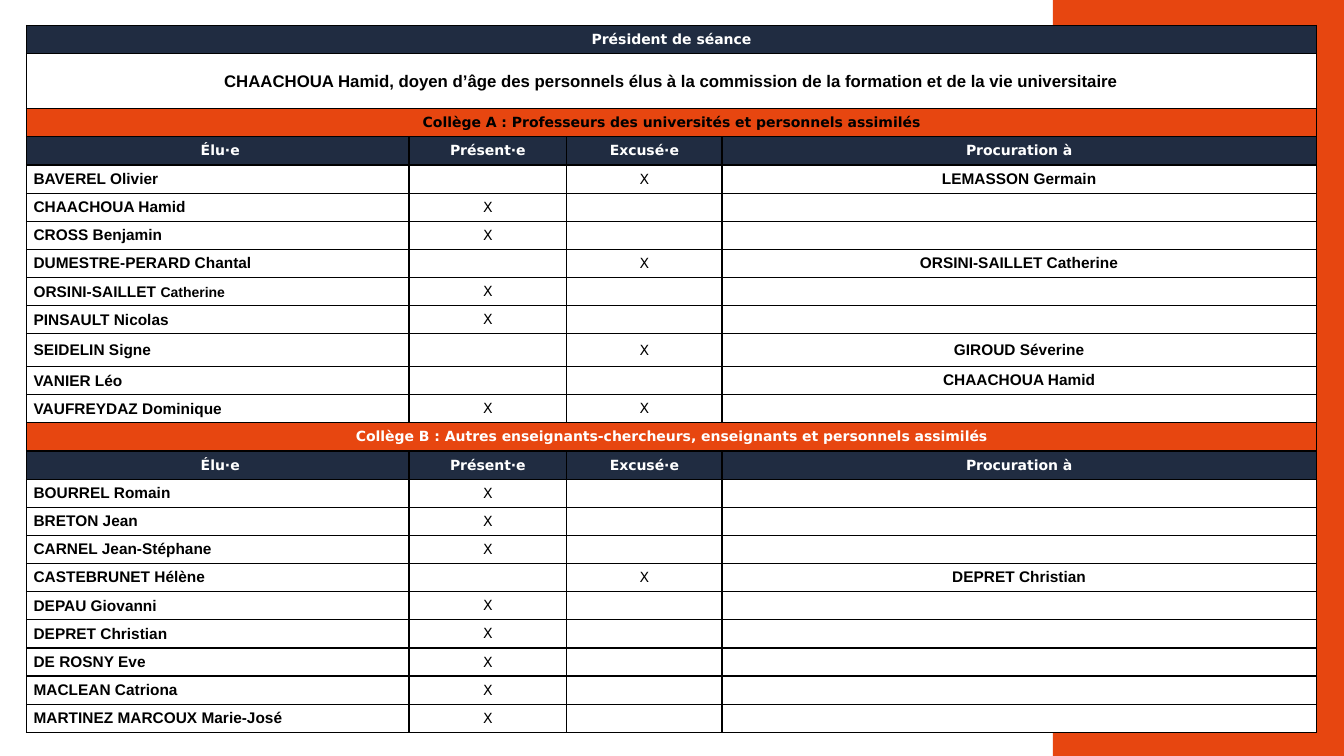
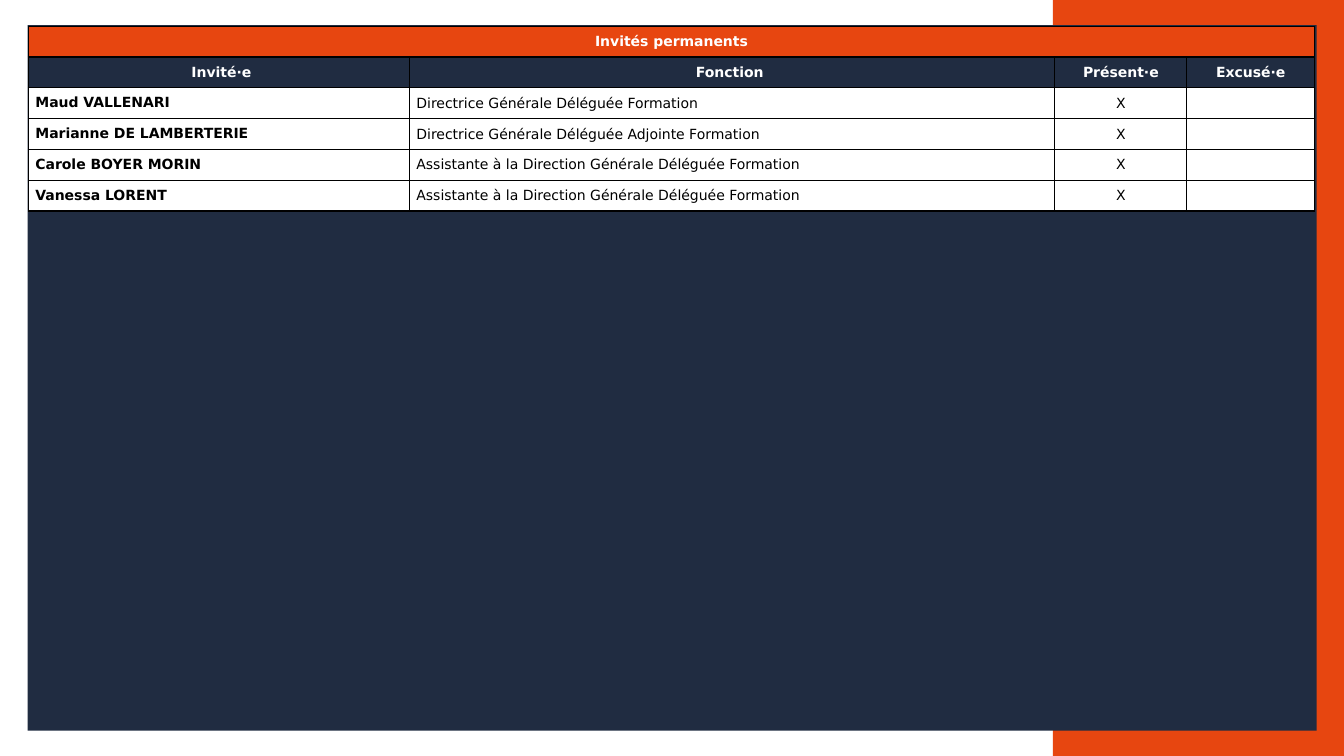
from dataclasses import dataclass, replace
from typing import NamedTuple

from lxml import etree
from pptx import Presentation
from pptx.dml.color import RGBColor
from pptx.enum import shapes, text
from pptx.oxml.ns import qn
from pptx.util import Pt


@dataclass(frozen=True)
class Theme:
    orange: str = "E74610"
    navy: str = "202C41"
    white: str = "FFFFFF"
    black: str = "000000"
    sans: str = "DejaVu Sans"
    arial: str = "Arial"
    small: float = 10
    name: float = 11
    lead: float = 12
    line_spacing: float = 12
    border: float = 1


THEME = Theme()


@dataclass(frozen=True)
class CellStyle:
    fill: str = THEME.white
    color: str = THEME.black
    font: str = THEME.sans
    size: float = THEME.small
    bold: bool = False
    centred: bool = True
    fixed_spacing: bool = True
    inset: float = 3.6


class Row(NamedTuple):
    """One table row; a single text spans every column."""
    texts: tuple[str, ...]
    styles: tuple[CellStyle, ...]
    height: float
    small_end: str = ""


class Elected(NamedTuple):
    name: str
    present: bool = False
    excused: bool = False
    proxy: str = ""
    small_end: str = ""
    height: float = 20.1


class Guest(NamedTuple):
    name: str
    role: str


MARK = CellStyle()
HEADER = CellStyle(fill=THEME.navy, color=THEME.white, bold=True)
BAND = replace(HEADER, fill=THEME.orange)
BLACK_BAND = replace(BAND, color=THEME.black)
PROXY = CellStyle(font=THEME.arial, size=THEME.name, bold=True)
NAME = replace(PROXY, centred=False, fixed_spacing=False, inset=5)
CHAIR = replace(PROXY, size=THEME.lead, fixed_spacing=False)
GUEST = replace(NAME, font=THEME.sans, size=THEME.small)
ROLE = replace(GUEST, bold=False, fixed_spacing=True)

ELECTED_HEADINGS = (" Élu·e", "Présent·e", "Excusé·e", "Procuration à")
GUEST_HEADINGS = (" Invité·e", "Fonction ", "Présent·e", "Excusé·e")
ELECTED_WIDTHS = (273.2, 112.6, 111, 424.5)
GUEST_WIDTHS = (272.2, 461, 94.3, 91.2)
ELECTED_HEIGHT = 20.1
GUEST_HEIGHT = 22

COLLEGE_A = (
    Elected("BAVEREL Olivier", excused=True, proxy="LEMASSON Germain"),
    Elected("CHAACHOUA Hamid", present=True),
    Elected("CROSS Benjamin", present=True),
    Elected("DUMESTRE-PERARD Chantal", excused=True, proxy="ORSINI-SAILLET Catherine"),
    Elected("ORSINI-SAILLET ", present=True, small_end="Catherine"),
    Elected("PINSAULT Nicolas", present=True),
    Elected("SEIDELIN Signe", excused=True, proxy="GIROUD Séverine", height=23.4),
    Elected("VANIER Léo", proxy="CHAACHOUA Hamid"),
    Elected("VAUFREYDAZ Dominique", present=True, excused=True),
)
COLLEGE_B = (
    Elected("BOURREL Romain", present=True),
    Elected("BRETON Jean", present=True),
    Elected("CARNEL Jean-Stéphane", present=True),
    Elected("CASTEBRUNET Hélène", excused=True, proxy="DEPRET Christian"),
    Elected("DEPAU Giovanni", present=True),
    Elected("DEPRET Christian", present=True),
    Elected("DE ROSNY Eve", present=True),
    Elected("MACLEAN Catriona", present=True),
    Elected("MARTINEZ MARCOUX Marie-José", present=True),
)
GUESTS = (
    Guest("Maud VALLENARI", "Directrice Générale Déléguée Formation"),
    Guest("Marianne DE LAMBERTERIE", "Directrice Générale Déléguée Adjointe Formation"),
    Guest("Carole BOYER MORIN", "Assistante à la Direction Générale Déléguée Formation"),
    Guest("Vanessa LORENT", "Assistante à la Direction Générale Déléguée Formation"),
)


def add_panel(s, left: float, top: float, width: float, height: float, color: str) -> None:
    sp = s.shapes.add_shape(shapes.MSO_SHAPE.RECTANGLE,
                            Pt(left), Pt(top), Pt(width), Pt(height))
    sp.shadow.inherit = False
    sp.fill.solid()
    sp.fill.fore_color.rgb = RGBColor.from_string(color)
    sp.line.fill.background()


def add_base_slide(prs):
    """Add a slide with the orange side band and the navy panel."""
    s = prs.slides.add_slide(prs.slide_layouts[6])
    add_panel(s, 752, 0, 208, 540, THEME.orange)
    add_panel(s, 19.8, 18, 920.7, 504, THEME.navy)
    return s


def add_borders(cell) -> None:
    tc_pr = cell._tc.get_or_add_tcPr()
    for side in ("lnL", "lnR", "lnT", "lnB"):
        line = etree.SubElement(tc_pr, qn(f"a:{side}"), w=str(Pt(THEME.border)))
        fill = etree.SubElement(line, qn("a:solidFill"))
        etree.SubElement(fill, qn("a:srgbClr"), val=THEME.black)


def add_run(p, content: str, style: CellStyle) -> None:
    r = p.add_run()
    r.text = content
    r.font.name = style.font
    r.font.size = Pt(style.size)
    r.font.bold = style.bold
    r.font.color.rgb = RGBColor.from_string(style.color)


def format_cell(cell, style: CellStyle) -> None:
    add_borders(cell)
    cell.fill.solid()
    cell.fill.fore_color.rgb = RGBColor.from_string(style.fill)
    cell.vertical_anchor = text.MSO_ANCHOR.MIDDLE
    cell.margin_left = cell.margin_right = Pt(style.inset)
    cell.margin_top = cell.margin_bottom = Pt(0)


def write_cell(cell, content: str, style: CellStyle, small_end: str = "") -> None:
    p = cell.text_frame.paragraphs[0]
    p.alignment = text.PP_ALIGN.CENTER if style.centred else text.PP_ALIGN.LEFT
    if style.fixed_spacing:
        p.line_spacing = Pt(THEME.line_spacing)
    if content:
        add_run(p, content, style)
    else:
        etree.SubElement(p._p, qn("a:endParaRPr"), sz=str(int(style.size * 100)))
    if small_end:
        add_run(p, small_end, replace(style, size=THEME.small))


def add_grid(s, left: float, top: float, widths: tuple[float, ...], rows: list[Row]) -> None:
    frame = s.shapes.add_table(len(rows), len(widths), Pt(left), Pt(top),
                               Pt(sum(widths)), Pt(sum(row.height for row in rows)))
    table = frame.table
    table.first_row = table.horz_banding = False
    for column, width in zip(table.columns, widths):
        column.width = Pt(width)
    for i, row in enumerate(rows):
        table.rows[i].height = Pt(row.height)
        cells = list(table.rows[i].cells)
        spans = len(row.texts) == 1
        for cell, style in zip(cells, row.styles * len(cells) if spans else row.styles):
            format_cell(cell, style)
        if spans:
            cells[0].merge(cells[-1])
        for j, (content, style) in enumerate(zip(row.texts, row.styles)):
            write_cell(cells[j], content, style, row.small_end if j == 0 else "")


def span_row(content: str, style: CellStyle, height: float) -> Row:
    return Row((content,), (style,), height)


def header_row(headings: tuple[str, ...], height: float, inset: float) -> Row:
    return Row(headings, (replace(HEADER, inset=inset),) * len(headings), height)


def mark(checked: bool) -> str:
    return "X" if checked else ""


def college_rows(title: str, style: CellStyle, members: tuple[Elected, ...]) -> list[Row]:
    return [
        span_row(title, style, ELECTED_HEIGHT),
        header_row(ELECTED_HEADINGS, ELECTED_HEIGHT, HEADER.inset),
        *(Row((m.name, mark(m.present), mark(m.excused), m.proxy),
              (NAME, MARK, MARK, PROXY), m.height, m.small_end) for m in members),
    ]


def add_elected_slide(prs) -> None:
    rows = [
        span_row("Président de séance", HEADER, ELECTED_HEIGHT),
        span_row("CHAACHOUA Hamid, doyen d’âge des personnels élus à la commission "
                 "de la formation et de la vie universitaire", CHAIR, 39.4),
        *college_rows("Collège A : Professeurs des universités et personnels assimilés",
                      BLACK_BAND, COLLEGE_A),
        *college_rows("Collège B : Autres enseignants-chercheurs, enseignants "
                      "et personnels assimilés", BAND, COLLEGE_B),
    ]
    add_grid(add_base_slide(prs), 19, 18.2, ELECTED_WIDTHS, rows)


def add_guests_slide(prs) -> None:
    rows = [
        span_row("Invités permanents", BAND, GUEST_HEIGHT),
        header_row(GUEST_HEADINGS, GUEST_HEIGHT, GUEST.inset),
        *(Row((g.name, g.role, mark(True), mark(False)),
              (GUEST, ROLE, MARK, MARK), GUEST_HEIGHT) for g in GUESTS),
    ]
    add_grid(add_base_slide(prs), 20.3, 18.7, GUEST_WIDTHS, rows)


def main() -> None:
    prs = Presentation()
    prs.slide_width, prs.slide_height = Pt(960), Pt(540)
    add_elected_slide(prs)
    add_guests_slide(prs)
    prs.save("out.pptx")


if __name__ == "__main__":
    main()
